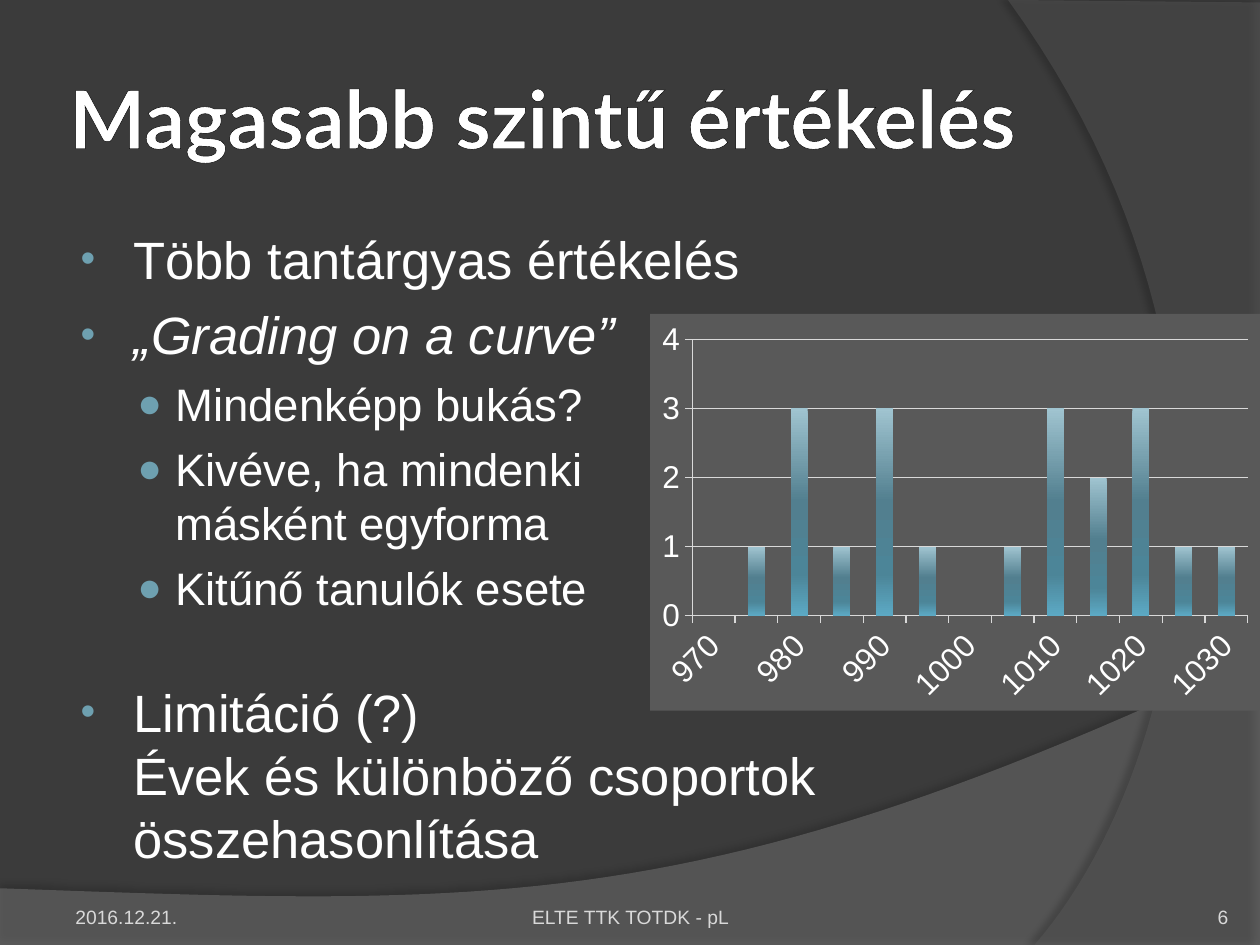
from lxml import etree
from pptx import Presentation
from pptx.chart.data import CategoryChartData
from pptx.dml.color import RGBColor
from pptx.enum.chart import XL_CHART_TYPE, XL_TICK_MARK
from pptx.enum.text import MSO_ANCHOR, MSO_AUTO_SIZE, PP_ALIGN
from pptx.oxml.ns import qn
from pptx.util import Emu, Inches, Pt

W, H = 10, 7.5
COLUMN = XL_CHART_TYPE.COLUMN_CLUSTERED
OUTSIDE = XL_TICK_MARK.OUTSIDE
LEFT, CENTER, RIGHT = PP_ALIGN.LEFT, PP_ALIGN.CENTER, PP_ALIGN.RIGHT
TOP, MIDDLE, BOTTOM = MSO_ANCHOR.TOP, MSO_ANCHOR.MIDDLE, MSO_ANCHOR.BOTTOM
WHITE, ACCENT, GRAY = "FFFFFF", "6EA0B0", "D9D9D9"

# size, left margin, indent, space before, bullet, bullet size
LEVELS = [(30, 0.46, -0.42, 7, "•", 80), (26, 0.79, -0.3, 6, "●", 90)]
BODY = [
    (0, "Több tantárgyas értékelés"),
    (0, "„Grading on a curve”"),
    (1, "Mindenképp bukás?"),
    (1, "Kivéve, ha mindenki\nmásként egyforma"),
    (1, "Kitűnő tanulók esete"),
    (0, "Limitáció (?)\nÉvek és különböző csoportok\nösszehasonlítása"),
]
ITALIC_ITEM, GAP_ITEM = 1, 4
FOOTERS = [
    ("2016.12.21.", 0.5, 2.33, LEFT, (0.1, 0.05, 0.1, 0)),
    ("ELTE TTK TOTDK - pL", 3.42, 3.17, CENTER, (0, 0.05, 0, 0)),
    ("6", 8.92, 0.83, RIGHT, (0, 0, 0, 0)),
]
COUNTS = [0, 1, 3, 1, 3, 1, 0, 1, 3, 2, 3, 1, 1]


def rgb(value):
    return RGBColor.from_string(value)


def sub(parent, tag, **attrs):
    return etree.SubElement(parent, qn(tag), {k: str(v) for k, v in attrs.items()})


def style(font, size, color, name="Arial"):
    font.size, font.name = Pt(size), name
    font.color.rgb = rgb(color)


def place(sp, left, top, width, height):
    sp.left, sp.top = Inches(left), Inches(top)
    sp.width, sp.height = Inches(width), Inches(height)


def set_frame(tf, anchor, insets):
    tf.word_wrap, tf.auto_size = True, MSO_AUTO_SIZE.NONE
    tf.vertical_anchor = anchor
    (tf.margin_left, tf.margin_top,
     tf.margin_right, tf.margin_bottom) = map(Inches, insets)


def bezier(points, steps=48):
    for i in range(1, steps + 1):
        t = i / steps
        weights = ((1 - t) ** 3, 3 * t * (1 - t) ** 2, 3 * t * t * (1 - t), t ** 3)
        yield tuple(sum(w * p[axis] for w, p in zip(weights, points))
                    for axis in (0, 1))


def add_swoosh(slide, corners, curve, color, alpha, shadow):
    points = [(Inches(x), Inches(y)) for x, y in corners + list(bezier(curve))]
    builder = slide.shapes.build_freeform(*points[0])
    builder.add_line_segments(points[1:], close=True)
    sp = builder.convert_to_shape()
    sp.fill.solid()
    sp.fill.fore_color.rgb = rgb(color)
    sp.line.fill.background()
    sp.shadow.inherit = False
    spPr = sp._element.spPr
    sub(spPr.find(qn("a:solidFill"))[0], "a:alpha", val=alpha * 1000)
    opacity, blur, dist, angle = shadow
    outer = sub(spPr.find(qn("a:effectLst")), "a:outerShdw", blurRad=Pt(blur),
                dist=Pt(dist), dir=angle * 60000, rotWithShape=0)
    sub(sub(outer, "a:srgbClr", val="000000"), "a:alpha", val=opacity * 1000)


def add_footer(slide, text, left, width, align, insets):
    sp = slide.shapes.add_textbox(Inches(left), Inches(6.97), Inches(width), Inches(0.4))
    set_frame(sp.text_frame, BOTTOM, insets)
    p = sp.text_frame.paragraphs[0]
    p.text, p.alignment = text, align
    style(p.font, 11, GRAY)


def fill_title(sp, text):
    place(sp, 0.5, 0.3, 8.17, 1.25)
    set_frame(sp.text_frame, MIDDLE, (0.05,) * 4)
    p = sp.text_frame.paragraphs[0]
    p.text, p.alignment = text, LEFT
    style(p.font, 46, WHITE, "Lato")
    p.font.bold = True
    ln = etree.Element(qn("a:ln"), w=str(Pt(0.25)))
    sub(sub(ln, "a:solidFill"), "a:srgbClr", val="000000")
    p.font._element.insert(0, ln)


def set_bullet(p, margin, indent, char, percent):
    pPr = p._p.get_or_add_pPr()
    pPr.set("marL", str(Inches(margin)))
    pPr.set("indent", str(Inches(indent)))
    color = etree.Element(qn("a:buClr"))
    sub(color, "a:srgbClr", val=ACCENT)
    size = etree.Element(qn("a:buSzPct"), val=str(percent * 1000))
    face = etree.Element(qn("a:buFont"), typeface="Arial")
    mark = etree.Element(qn("a:buChar"), char=char)
    for el in (color, size, face, mark):
        pPr.find(qn("a:defRPr")).addprevious(el)


def fill_body(sp, items):
    place(sp, 0.5, 1.75, 8.17, 5.23)
    tf = sp.text_frame
    set_frame(tf, TOP, (0.1, 0.05, 0.1, 0.05))
    for i, (level, text) in enumerate(items):
        p = tf.add_paragraph() if i else tf.paragraphs[0]
        size, margin, indent, before, char, percent = LEVELS[level]
        p.text, p.level = text, level
        p.space_before = Pt(before)
        p.space_after = Pt(30 if i == GAP_ITEM else 0)
        style(p.font, size, WHITE)
        p.font.italic = i == ITALIC_ITEM
        set_bullet(p, margin, indent, char, percent)


def fill_bars(series):
    series.format.fill.solid()
    solid = series._element.find(qn("c:spPr")).find(qn("a:solidFill"))
    grad = etree.Element(qn("a:gradFill"), rotWithShape="1")
    stops = sub(grad, "a:gsLst")
    for pos, color in ((0, "A0C4D0"), (45, "527F8F"), (80, "4C8598"), (100, "5CA9C4")):
        sub(sub(stops, "a:gs", pos=pos * 1000), "a:srgbClr", val=color)
    sub(grad, "a:lin", ang=90 * 60000, scaled=0)
    solid.getparent().replace(solid, grad)


def add_histogram(slide):
    data = CategoryChartData()
    data.categories = [str(c) for c in range(970, 1031, 5)]
    data.add_series("Series 1", COUNTS)
    frame = slide.shapes.add_chart(COLUMN, Inches(5.16), Inches(2.49),
                                   Inches(4.84), Inches(3.15), data)
    chart = frame.chart
    chart.has_legend = chart.has_title = False
    style(chart.font, 18, WHITE)
    plot = chart.plots[0]
    plot.gap_width, plot.vary_by_categories = 150, False
    fill_bars(plot.series[0])
    value, category = chart.value_axis, chart.category_axis
    value.minimum_scale, value.maximum_scale, value.major_unit = 0, 4, 1
    value.has_major_gridlines = True
    for axis in (value, category):
        axis.major_tick_mark = OUTSIDE
        style(axis.tick_labels.font, 18, WHITE)
    for fmt in (value.format, category.format, value.major_gridlines.format):
        fmt.line.color.rgb = rgb(GRAY)
        fmt.line.width = Pt(0.75)
    body = category._element.find(qn("c:txPr")).find(qn("a:bodyPr"))
    body.set("rot", str(-45 * 60000))
    spPr = etree.Element(qn("c:spPr"))
    sub(sub(spPr, "a:solidFill"), "a:srgbClr", val="595959")
    sub(sub(spPr, "a:ln"), "a:noFill")
    chart._chartSpace.find(qn("c:chart")).addnext(spPr)


def main():
    prs = Presentation()
    prs.slide_width, prs.slide_height = Inches(W), Inches(H)
    slide = prs.slides.add_slide(prs.slide_layouts[1])
    slide.background.fill.solid()
    slide.background.fill.fore_color.rgb = rgb("3B3B3B")
    add_swoosh(slide, [(0, 7.05), (0, H), (W, H), (W, 5.2)],
               [(W, 5.2), (5.59, 7.29), (3.91, 7.19), (0, 7.05)],
               "7F7F7F", 45, (35, 4, 3.5, 270))
    add_swoosh(slide, [(W, 0.02), (W, H), (8.21, H)],
               [(8.21, H), (9.35, 6.19), (10.18, 3), (8, 0)],
               "5E5E5E", 40, (45, 4, 4, 180))
    for footer in FOOTERS:
        add_footer(slide, *footer)
    title, body = slide.placeholders
    for sp in (title, body):
        slide.shapes._spTree.append(sp._element)
    fill_title(title, "Magasabb szintű értékelés")
    fill_body(body, BODY)
    add_histogram(slide)
    prs.save("out.pptx")


if __name__ == "__main__":
    main()
